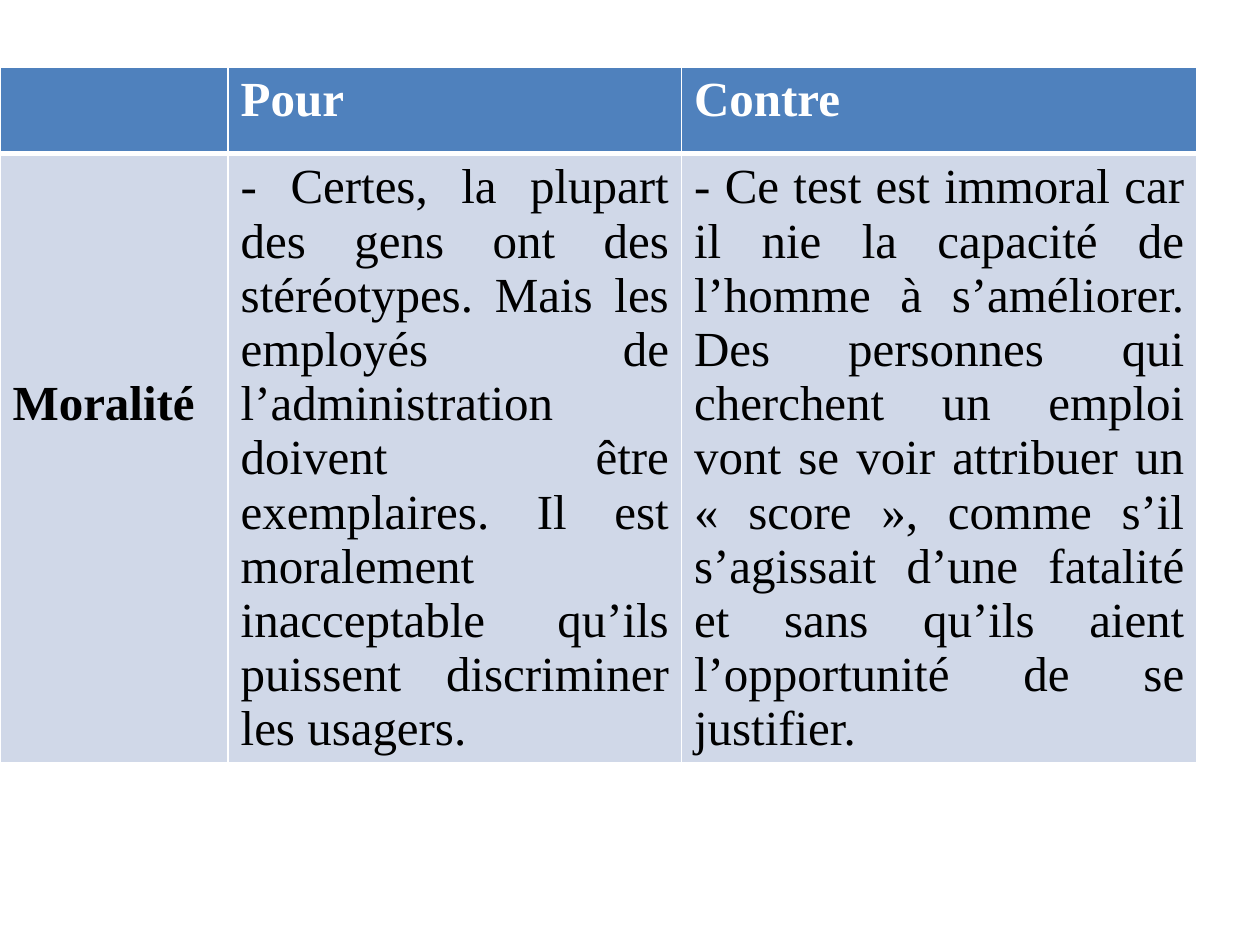
from lxml import etree
from pptx import Presentation
from pptx import util as u
from pptx.dml.color import RGBColor
from pptx.enum import text
from pptx.oxml.ns import qn

COLORS = {"header": "4F81BD", "body": "D0D8E8", "white": "FFFFFF", "black": "000000"}
FONT = "Times New Roman"
ROWS = [
    ["", "Pour", "Contre"],
    [
        "Moralité",
        "- Certes, la plupart des gens ont des stéréotypes. Mais les employés de "
        "l’administration doivent être exemplaires. Il est moralement inacceptable "
        "qu’ils puissent discriminer les usagers.",
        "- Ce test est immoral car il nie la capacité de l’homme à s’améliorer. "
        "Des personnes qui cherchent un emploi vont se voir attribuer un « score », "
        "comme s’il s’agissait d’une fatalité et sans qu’ils aient l’opportunité "
        "de se justifier.",
    ],
]
COLUMN_WIDTHS = [4.6, 9.14, 10.39]
ROW_HEIGHTS = [1.75, 12.25]
LABEL_TOP = 4.5


def write(cell, words, color, size=28, bold=False, align=text.PP_ALIGN.LEFT):
    para = cell.text_frame.paragraphs[0]
    para.alignment = align
    para.font.size = u.Pt(size)
    if not words:
        return
    span = para.add_run()
    span.text = words
    span.font.name = FONT
    span.font.size = u.Pt(size)
    span.font.bold = bold
    span.font.color.rgb = RGBColor.from_string(COLORS[color])


def add_borders(cell, widths):
    properties = cell._tc.get_or_add_tcPr()
    for index, (side, width) in enumerate(widths.items()):
        line = etree.Element(qn("a:" + side), w=str(u.Pt(width)))
        fill = etree.SubElement(line, qn("a:solidFill"))
        etree.SubElement(fill, qn("a:srgbClr"), val=COLORS["white"])
        properties.insert(index, line)


def main():
    deck = Presentation()
    deck.slide_width, deck.slide_height = u.Cm(25.4), u.Cm(19.05)
    page = deck.slides.add_slide(deck.slide_layouts[6])
    frame = page.shapes.add_table(
        len(ROWS), len(COLUMN_WIDTHS), u.Cm(0), u.Cm(1.35),
        u.Cm(sum(COLUMN_WIDTHS)), u.Cm(sum(ROW_HEIGHTS)))
    table = frame.table
    for column, width in zip(table.columns, COLUMN_WIDTHS):
        column.width = u.Cm(width)
    for row, height in zip(table.rows, ROW_HEIGHTS):
        row.height = u.Cm(height)

    for r, words_in_row in enumerate(ROWS):
        for c, words in enumerate(words_in_row):
            cell = table.cell(r, c)
            header, label = r == 0, c == 0
            cell.fill.solid()
            cell.fill.fore_color.rgb = RGBColor.from_string(
                COLORS["header" if header else "body"])
            add_borders(cell, {"lnL": 1, "lnR": 1, "lnT": 1 if header else 3,
                               "lnB": 3 if header else 1})
            justified = not header and not label
            write(cell, words, "white" if header else "black",
                  bold=header or label,
                  align=text.PP_ALIGN.JUSTIFY if justified else text.PP_ALIGN.LEFT)
    table.cell(1, 0).margin_top = u.Cm(LABEL_TOP)

    deck.save("out.pptx")


if __name__ == "__main__":
    main()
